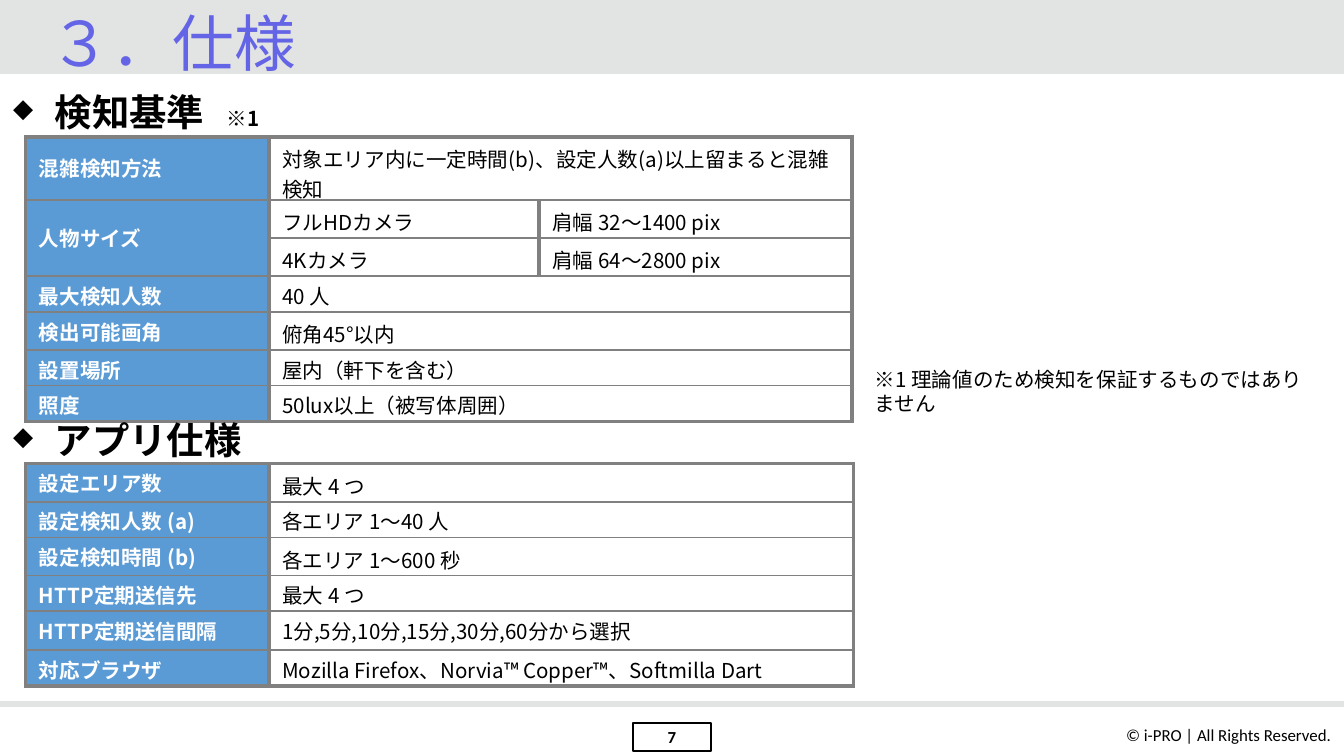
from dataclasses import dataclass
from typing import NamedTuple, Optional

from lxml.etree import SubElement
from pptx import Presentation
from pptx.dml.color import RGBColor as Color
from pptx.enum.shapes import MSO_CONNECTOR as Connector, MSO_SHAPE as Preset
from pptx.enum.text import MSO_ANCHOR as Anchor, MSO_AUTO_SIZE as Fit, PP_ALIGN as Align
from pptx.oxml.ns import qn
from pptx.util import Pt

PX = 4572
PAGE_WIDTH, PAGE_HEIGHT = 2000, 1125
RULE_TOP = 1048
BULLET_INDENT = 62


@dataclass(frozen=True)
class Theme:
    latin: str = "Calibri"
    japanese: str = "Noto Sans CJK JP"
    black: str = "000000"
    white: str = "FFFFFF"
    title: str = "6464E6"
    band: str = "E2E3E3"
    label: str = "5B9BD5"
    border: str = "808080"
    title_size: int = 33
    heading_size: int = 20
    gap_size: int = 12
    body_size: int = 11
    footer_size: int = 9
    thick: float = 2.25
    thin: float = 1
    tight: float = 0.9


THEME = Theme()


class Box(NamedTuple):
    left: int
    top: int
    width: int
    height: int

    def emu(self) -> list[int]:
        return [side * PX for side in self]


class Span(NamedTuple):
    text: str
    size: int = THEME.body_size
    bold: bool = False
    color: str = THEME.black
    font: str = THEME.japanese


class Row(NamedTuple):
    height: int
    label: Optional[str]
    values: tuple[str, ...]
    spacing: Optional[float] = THEME.tight


class Grid(NamedTuple):
    box: Box
    columns: tuple[int, ...]
    rows: tuple[Row, ...]


class Heading(NamedTuple):
    box: Box
    spans: tuple[Span, ...]


CRITERIA_HEADING = Heading(Box(0, 122, 1906, 88), (
    Span("検知基準", THEME.heading_size, True),
    Span("　", THEME.gap_size, True),
    Span("※1", bold=True),
))
APP_HEADING = Heading(Box(0, 610, 1214, 88), (Span("アプリ仕様", THEME.heading_size, True),))

CRITERIA = Grid(Box(38, 204, 1230, 388), (362, 402, 466), (
    Row(48, "混雑検知方法", ("対象エリア内に一定時間(b)、設定人数(a)以上留まると混雑検知",), None),
    Row(50, "人物サイズ", ("フルHDカメラ", "肩幅 32～1400 pix"), None),
    Row(54, None, ("4Kカメラ", "肩幅 64～2800 pix"), None),
    Row(36, "最大検知人数", ("40 人",)),
    Row(36, "検出可能画角", ("俯角45°以内",), None),
    Row(36, "設置場所", ("屋内（軒下を含む）",)),
    Row(36, "照度", ("50lux以上（被写体周囲）",)),
))
APP = Grid(Box(38, 690, 1232, 334), (362, 870), (
    Row(48, "設定エリア数", ("最大 4 つ",), None),
    Row(36, "設定検知人数 (a)", ("各エリア 1～40 人",)),
    Row(36, "設定検知時間 (b)", ("各エリア 1～600 秒",), None),
    Row(36, "HTTP定期送信先", ("最大 4 つ",)),
    Row(58, "HTTP定期送信間隔", ("1分,5分,10分,15分,30分,60分から選択",)),
    Row(30, "対応ブラウザ", ("Mozilla Firefox、Norvia™ Copper™、Softmilla Dart",)),
))


def apply(target, formats: dict) -> None:
    for name, value in formats.items():
        setattr(target, name, value)


def write(frame, spans: tuple[Span, ...], **formats):
    para = frame.paragraphs[0]
    apply(para, formats)
    for span in spans:
        run = para.add_run()
        run.text = span.text
        apply(run.font, {"name": span.font, "size": Pt(span.size), "bold": span.bold})
        run.font.color.rgb = Color.from_string(span.color)
        SubElement(run.font._element, qn("a:ea")).set("typeface", THEME.japanese)
    return para


def add_text(page, box: Box, spans: tuple[Span, ...], anchor=Anchor.TOP, wrap=True, **formats):
    frame = page.shapes.add_textbox(*box.emu()).text_frame
    apply(frame, {"word_wrap": wrap, "auto_size": Fit.SHAPE_TO_FIT_TEXT, "vertical_anchor": anchor})
    return write(frame, spans, **formats)


def add_heading(page, heading: Heading) -> None:
    para = add_text(page, heading.box, heading.spans, Anchor.MIDDLE)
    props = para._p.get_or_add_pPr()
    props.set("marL", str(BULLET_INDENT * PX))
    props.set("indent", str(-BULLET_INDENT * PX))
    SubElement(props, qn("a:buSzPct")).set("val", "70000")
    SubElement(props, qn("a:buChar")).set("char", "◆")


def add_rect(page, box: Box, fill: Optional[str] = None, line: Optional[str] = None):
    rect = page.shapes.add_shape(Preset.RECTANGLE, *box.emu())
    rect.shadow.inherit = False
    for part, color in ((rect.fill, fill), (rect.line.fill, line)):
        if color:
            part.solid()
            part.fore_color.rgb = Color.from_string(color)
        else:
            part.background()
    return rect


def add_borders(cell, top: float, bottom: float) -> None:
    props = cell._tc.get_or_add_tcPr()
    widths = {"L": THEME.thick, "R": THEME.thick, "T": top, "B": bottom}
    for place, (side, width) in enumerate(widths.items()):
        line = SubElement(props, qn(f"a:ln{side}"))
        line.set("w", str(Pt(width)))
        fill = SubElement(line, qn("a:solidFill"))
        SubElement(fill, qn("a:srgbClr")).set("val", THEME.border)
        props.insert(place, line)


def add_grid(page, grid: Grid) -> None:
    frame = page.shapes.add_table(len(grid.rows), len(grid.columns), *grid.box.emu())
    table = frame.table
    apply(table, {"first_row": False, "horz_banding": False})
    for column, width in zip(table.columns, grid.columns):
        column.width = width * PX
    last = len(grid.rows) - 1
    for index, row in enumerate(grid.rows):
        table.rows[index].height = row.height * PX
        for place in range(len(grid.columns)):
            cell = table.cell(index, place)
            cell.vertical_anchor = Anchor.MIDDLE
            cell.fill.solid()
            cell.fill.fore_color.rgb = Color.from_string(THEME.white if place else THEME.label)
            add_borders(cell, THEME.thin if index else THEME.thick,
                        THEME.thick if index == last else THEME.thin)
        if row.label:
            label = Span(row.label, bold=True, color=THEME.white)
            write(table.cell(index, 0).text_frame, (label,), line_spacing=THEME.tight)
        else:
            table.cell(index - 1, 0).merge(table.cell(index, 0))
        for place, value in enumerate(row.values, 1):
            write(table.cell(index, place).text_frame, (Span(value),), line_spacing=row.spacing)
        if len(row.values) < len(grid.columns) - 1:
            table.cell(index, 1).merge(table.cell(index, len(grid.columns) - 1))
    frame.height = grid.box.height * PX


def add_frame(page) -> None:
    add_rect(page, Box(0, 0, PAGE_WIDTH, 110), fill=THEME.band)
    footer = Span("© i-PRO | All Rights Reserved.", THEME.footer_size, font=THEME.latin)
    add_text(page, Box(1650, 1069, 350, 50), (footer,), wrap=False, alignment=Align.RIGHT)
    ends = Box(0, RULE_TOP, PAGE_WIDTH, RULE_TOP).emu()
    rule = page.shapes.add_connector(Connector.STRAIGHT, *ends)
    rule.line.color.rgb = Color.from_string(THEME.band)
    rule.line.width = Pt(3)
    SubElement(rule._element.spPr, qn("a:effectLst"))
    number = add_rect(page, Box(942, 1076, 116, 42), line=THEME.black)
    number.line.width = Pt(1)
    sides = ("margin_left", "margin_top", "margin_right", "margin_bottom")
    apply(number.text_frame, {"vertical_anchor": Anchor.MIDDLE, **dict.fromkeys(sides, 6 * PX)})
    write(number.text_frame, (Span("7", THEME.footer_size, True, font=THEME.latin),),
          alignment=Align.CENTER)


def add_title(page) -> None:
    title = page.shapes.title
    apply(title, dict(zip(("left", "top", "width", "height"), Box(54, 22, 1868, 84).emu())))
    apply(title.text_frame, {"vertical_anchor": Anchor.MIDDLE, "margin_bottom": 0,
                             "auto_size": Fit.NONE, "word_wrap": True})
    write(title.text_frame, (Span("３．仕様", THEME.title_size, False, THEME.title, THEME.latin),),
          alignment=Align.LEFT, line_spacing=THEME.tight)
    page.shapes._spTree.append(title._element)


def main() -> None:
    deck = Presentation()
    apply(deck, {"slide_width": PAGE_WIDTH * PX, "slide_height": PAGE_HEIGHT * PX})
    page = deck.slides.add_slide(deck.slide_layouts[5])
    add_frame(page)
    add_title(page)
    add_text(page, Box(1282, 536, 692, 58), (Span("※1 理論値のため検知を保証するものではありません"),))
    add_heading(page, CRITERIA_HEADING)
    add_grid(page, CRITERIA)
    add_heading(page, APP_HEADING)
    add_grid(page, APP)
    deck.save("out.pptx")


if __name__ == "__main__":
    main()
